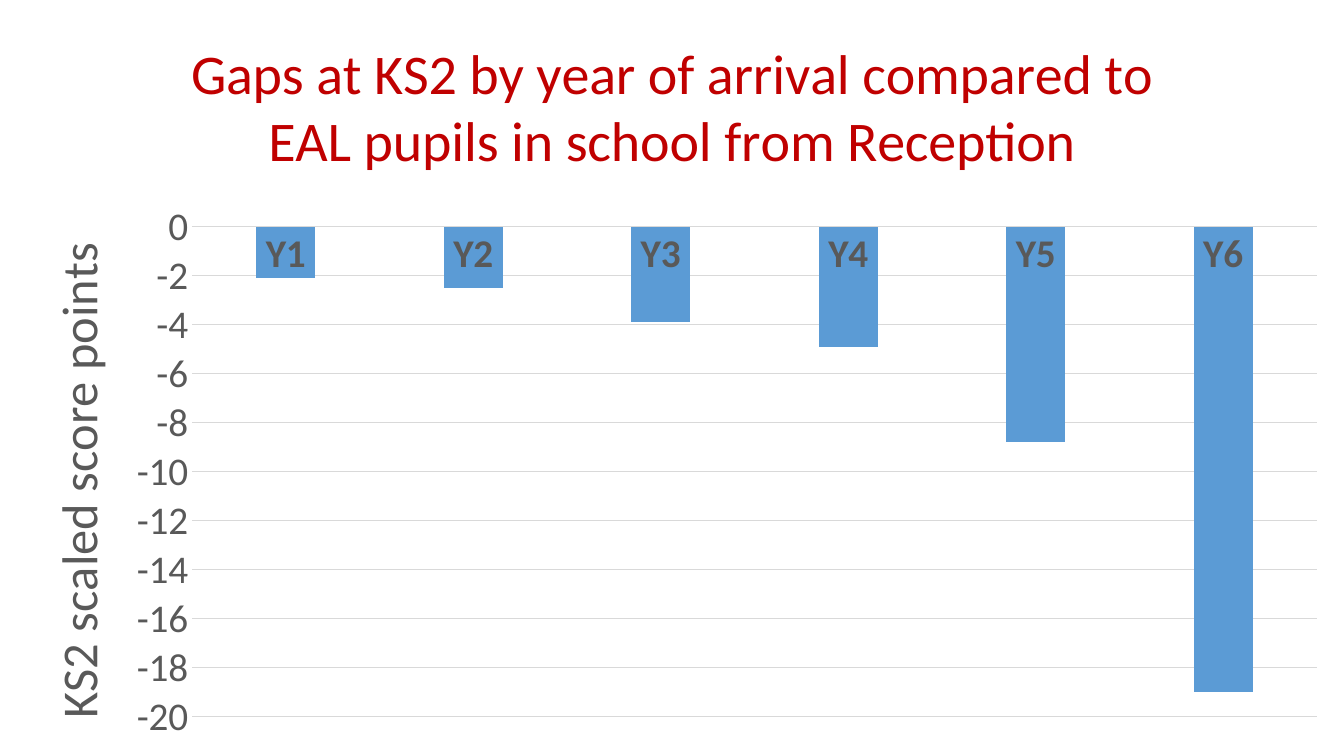
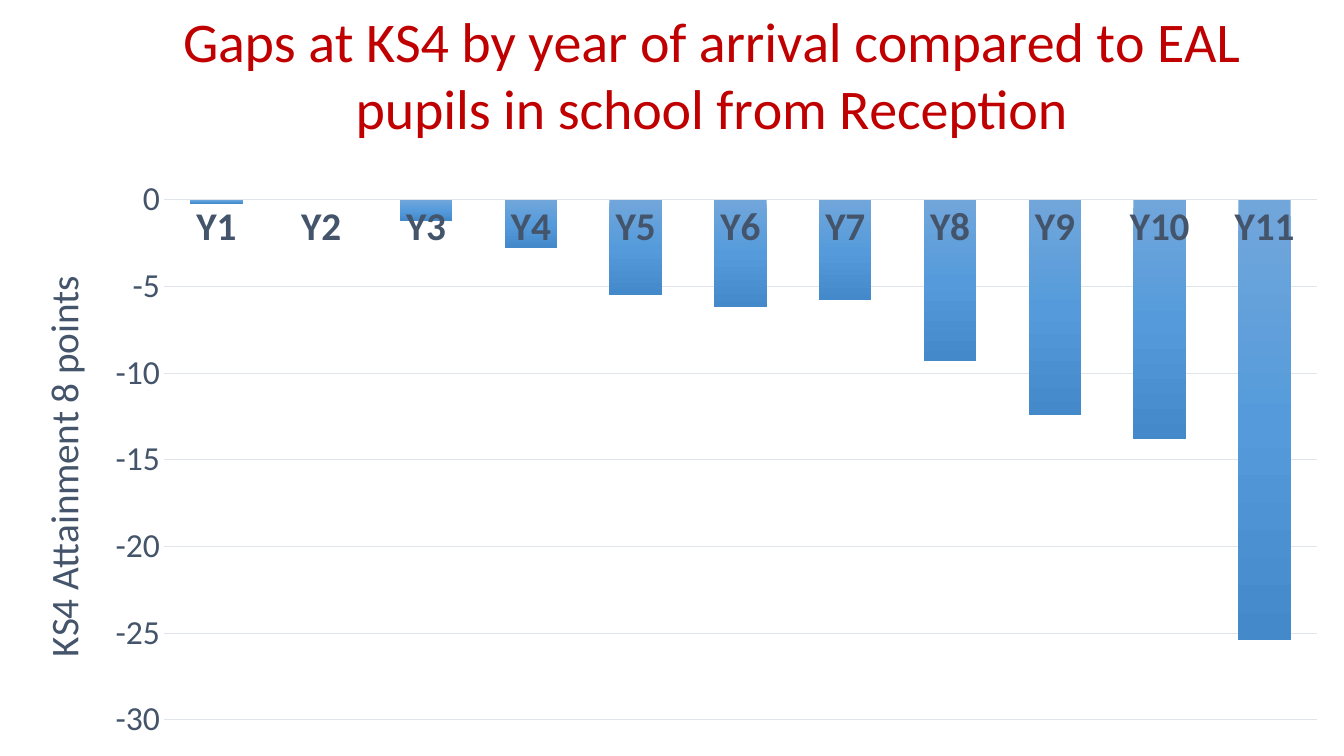
import lxml.etree
import pptx
import pptx.chart.data
import pptx.dml.color
import pptx.enum.chart
import pptx.oxml.ns
import pptx.util

SLIDE_WIDTH, SLIDE_HEIGHT = 1344, 756
EMU_PER_PX = 12192000 / SLIDE_WIDTH
FONT_NAME = "Calibri"
TITLE_COLOR = "C00000"
TITLE_SIZE = 40
BLANK_LAYOUT = 6

CHARTS = [
    {
        "title": ["Gaps at KS2 by year of arrival compared to",
                  "EAL pupils in school from Reception"],
        "title_at": (188, 37),
        "axis_title": "KS2 scaled score points",
        "axis_title_at": (34, 234),
        "axis_title_size": 36,
        "plot_box": (192, 227, 1125, 490),
        "values": [-2.1, -2.5, -3.9, -4.9, -8.8, -19],
        "scale": {"maximum_scale": 0, "minimum_scale": -20, "major_unit": 2},
        "bars": {"gap_width": 219, "overlap": -27, "vary_by_categories": False},
        "fill": ["5B9BD5"],
        "text_color": "595959",
        "line_color": "D9D9D9",
        "value_size": 28,
    },
    {
        "title": ["Gaps at KS4 by year of arrival compared to EAL",
                  "pupils in school from Reception"],
        "title_at": (180, 5),
        "axis_title": "KS4 Attainment 8 points",
        "axis_title_at": (30, 269),
        "axis_title_size": 28,
        "plot_box": (164, 200, 1153, 520),
        "values": [-0.2, 0, -1.2, -2.8, -5.5, -6.2, -5.8, -9.3, -12.4, -13.8, -25.4],
        "scale": {"maximum_scale": 0, "minimum_scale": -30, "major_unit": 5},
        "bars": {"gap_width": 100, "overlap": -24, "vary_by_categories": False},
        "fill": ["71A6DB", "559BDB", "448ACA"],
        "text_color": "44546A",
        "line_color": "E0E5EB",
        "value_size": 24,
    },
]


def px(length):
    return pptx.util.Emu(round(length * EMU_PER_PX))


def color(hex_string):
    return pptx.dml.color.RGBColor.from_string(hex_string)


def set_attributes(target, values):
    for name, value in values.items():
        setattr(target, name, value)


def format_font(font, size, hex_string, bold=False):
    set_attributes(font, {"name": FONT_NAME, "size": pptx.util.Pt(size), "bold": bold})
    font.color.rgb = color(hex_string)


def add_element(parent, tag, **attributes):
    return lxml.etree.SubElement(parent, pptx.oxml.ns.qn(tag), attributes)


def place_in_chart(element, index, box, inner=False):
    for old_layout in element.findall(pptx.oxml.ns.qn("c:layout")):
        element.remove(old_layout)
    layout = add_element(element, "c:layout")
    element.insert(index, layout)
    manual = add_element(layout, "c:manualLayout")
    if inner:
        add_element(manual, "c:layoutTarget", val="inner")
    for mode in ("c:xMode", "c:yMode"):
        add_element(manual, mode, val="edge")
    extents = (SLIDE_WIDTH, SLIDE_HEIGHT, SLIDE_WIDTH, SLIDE_HEIGHT)
    for tag, length, extent in zip(("c:x", "c:y", "c:w", "c:h"), box, extents):
        add_element(manual, tag, val=str(length / extent))


def write_title(title, lines, position, size, hex_string):
    frame = title.text_frame
    frame.text = "\n".join(lines)
    for paragraph in frame.paragraphs:
        format_font(paragraph.font, size, hex_string)
        for run in paragraph.runs:
            format_font(run.font, size, hex_string)
    place_in_chart(title._element, 1, position)
    return frame


def format_axes(chart, settings):
    tick_none = pptx.enum.chart.XL_TICK_MARK.NONE
    text_color, line_color = settings["text_color"], settings["line_color"]
    category_axis, value_axis = chart.category_axis, chart.value_axis
    for axis in (category_axis, value_axis):
        set_attributes(axis, {"major_tick_mark": tick_none, "minor_tick_mark": tick_none})
    set_attributes(value_axis, settings["scale"])
    set_attributes(value_axis, {"has_major_gridlines": True, "has_title": True})
    format_font(category_axis.tick_labels.font, 28, text_color, bold=True)
    format_font(value_axis.tick_labels.font, settings["value_size"], text_color)
    for line in (category_axis.format.line, value_axis.major_gridlines.format.line):
        line.color.rgb = color(line_color)
        line.width = pptx.util.Pt(0.75)
    value_axis.format.line.fill.background()
    frame = write_title(value_axis.axis_title, [settings["axis_title"]],
                        settings["axis_title_at"], settings["axis_title_size"], text_color)
    body = frame._txBody.find(pptx.oxml.ns.qn("a:bodyPr"))
    body.set("rot", "-5400000")
    body.set("vert", "horz")


def fill_bars(series, hex_strings):
    series.invert_if_negative = False
    fill = series.format.fill
    if len(hex_strings) == 1:
        fill.solid()
        fill.fore_color.rgb = color(hex_strings[0])
        return
    fill.gradient()
    gradient = series._element.find(".//" + pptx.oxml.ns.qn("a:gradFill"))
    for child in list(gradient):
        gradient.remove(child)
    stops = add_element(gradient, "a:gsLst")
    for index, hex_string in enumerate(hex_strings):
        position = 100000 * index // (len(hex_strings) - 1)
        stop = add_element(stops, "a:gs", pos=str(position))
        add_element(stop, "a:srgbClr", val=hex_string)
    add_element(gradient, "a:lin", ang="5400000", scaled="0")


def add_gap_chart(slide, box, settings):
    data = pptx.chart.data.CategoryChartData()
    data.categories = [f"Y{year}" for year in range(1, len(settings["values"]) + 1)]
    data.add_series("Series 1", settings["values"])
    chart_type = pptx.enum.chart.XL_CHART_TYPE.COLUMN_CLUSTERED
    chart = slide.shapes.add_chart(chart_type, *map(px, box), data).chart
    set_attributes(chart, {"has_legend": False, "has_title": True})
    format_font(chart.font, 10, "000000")
    write_title(chart.chart_title, settings["title"], settings["title_at"],
                TITLE_SIZE, TITLE_COLOR)
    format_axes(chart, settings)
    set_attributes(chart.plots[0], settings["bars"])
    fill_bars(chart.plots[0].series[0], settings["fill"])
    place_in_chart(chart._chartSpace.chart.plotArea, 0, settings["plot_box"], inner=True)


def main():
    presentation = pptx.Presentation()
    set_attributes(presentation, {"slide_width": px(SLIDE_WIDTH),
                                  "slide_height": px(SLIDE_HEIGHT)})
    for settings in CHARTS:
        slide = presentation.slides.add_slide(presentation.slide_layouts[BLANK_LAYOUT])
        add_gap_chart(slide, (0, 0, SLIDE_WIDTH, SLIDE_HEIGHT), settings)
    presentation.save("out.pptx")


if __name__ == "__main__":
    main()
